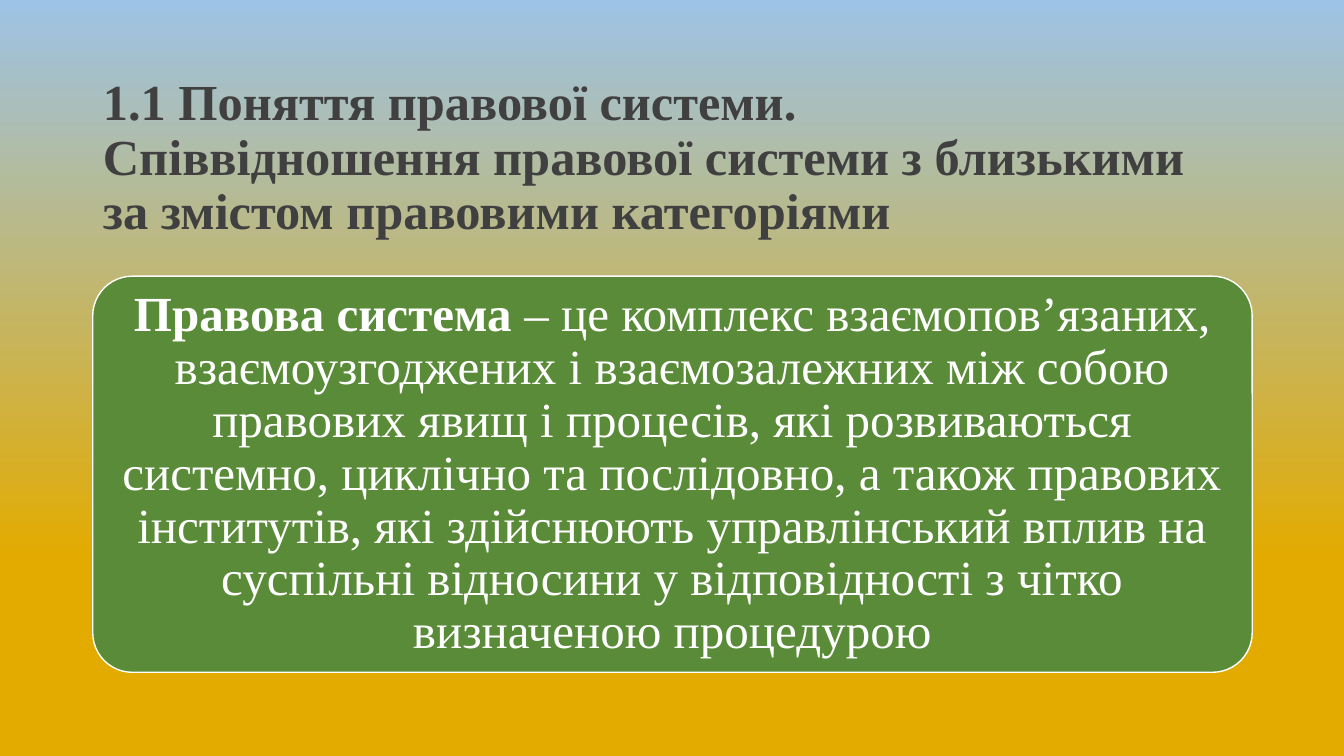
from typing import NamedTuple

import pptx
import pptx.dml.color
import pptx.enum.shapes
import pptx.enum.text
import pptx.util

RGBColor = pptx.dml.color.RGBColor
GOLD = RGBColor(0xE3, 0xAB, 0x00)
SKY = RGBColor(0x9D, 0xC3, 0xE6)
GREEN = RGBColor(0x5A, 0x8B, 0x39)
WHITE = RGBColor(0xFF, 0xFF, 0xFF)
CHARCOAL = RGBColor(0x40, 0x40, 0x40)

SLIDE_WIDTH = pptx.util.Inches(13.33)
SLIDE_HEIGHT = pptx.util.Inches(7.5)
FONT = "Times New Roman"
LEFT_MARGIN = 0.92
CONTENT_WIDTH = 11.5

TITLE = (
    "1.1 Поняття правової системи.\v"
    "Співвідношення правової системи з близькими за змістом правовими категоріями"
)
TERM = "Правова система"
DEFINITION = (
    " – це комплекс взаємопов’язаних, взаємоузгоджених і взаємозалежних "
    "між собою правових явищ і процесів, які розвиваються системно, циклічно "
    "та послідовно, а також правових інститутів, які здійснюють управлінський "
    "вплив на суспільні відносини у відповідності з чітко визначеною процедурою"
)


class Band(NamedTuple):
    top: float
    height: float

    def bounds(self) -> tuple[int, int, int, int]:
        lengths = (LEFT_MARGIN, self.top, CONTENT_WIDTH, self.height)
        left, top, width, height = map(pptx.util.Inches, lengths)
        return left, top, width, height


TITLE_BAND = Band(0.4, 2.35)
DEFINITION_BAND = Band(2.74, 3.93)


def format_paragraph(para, size: float, color: RGBColor, alignment) -> None:
    para.alignment = alignment
    para.line_spacing = 0.9
    para.font.name = FONT
    para.font.size = pptx.util.Pt(size)
    para.font.color.rgb = color


def paint_background(page) -> None:
    fill = page.background.fill
    fill.gradient()
    fill.gradient_angle = 90
    for stop, position, color in zip(fill.gradient_stops, (0.26, 1), (GOLD, SKY)):
        stop.position = position
        stop.color.rgb = color


def write_title(page) -> None:
    title = page.shapes.title
    title.left, title.top, title.width, title.height = TITLE_BAND.bounds()
    frame = title.text_frame
    frame.text = TITLE
    frame.word_wrap = True
    frame.auto_size = pptx.enum.text.MSO_AUTO_SIZE.NONE
    frame.vertical_anchor = pptx.enum.text.MSO_ANCHOR.MIDDLE
    para = frame.paragraphs[0]
    format_paragraph(para, 36, CHARCOAL, pptx.enum.text.PP_ALIGN.LEFT)
    para.font.bold = True


def add_definition(page) -> None:
    rounded = pptx.enum.shapes.MSO_SHAPE.ROUNDED_RECTANGLE
    box = page.shapes.add_shape(rounded, *DEFINITION_BAND.bounds())
    box.adjustments[0] = 0.1
    box.shadow.inherit = False
    box.fill.solid()
    box.fill.fore_color.rgb = GREEN
    box.line.color.rgb = WHITE
    box.line.width = pptx.util.Pt(1)

    frame = box.text_frame
    frame.word_wrap = True
    frame.vertical_anchor = pptx.enum.text.MSO_ANCHOR.MIDDLE
    frame.margin_left = frame.margin_right = pptx.util.Inches(0.07)
    frame.margin_top = frame.margin_bottom = pptx.util.Inches(0.05)
    para = frame.paragraphs[0]
    format_paragraph(para, 35, WHITE, pptx.enum.text.PP_ALIGN.CENTER)
    for text, bold in ((TERM, True), (DEFINITION, False)):
        span = para.add_run()
        span.text = text
        span.font.bold = bold


def main() -> None:
    deck = pptx.Presentation()
    deck.slide_width = SLIDE_WIDTH
    deck.slide_height = SLIDE_HEIGHT
    page = deck.slides.add_slide(deck.slide_layouts.get_by_name("Title Only"))
    paint_background(page)
    write_title(page)
    add_definition(page)
    deck.save("out.pptx")


if __name__ == "__main__":
    main()
